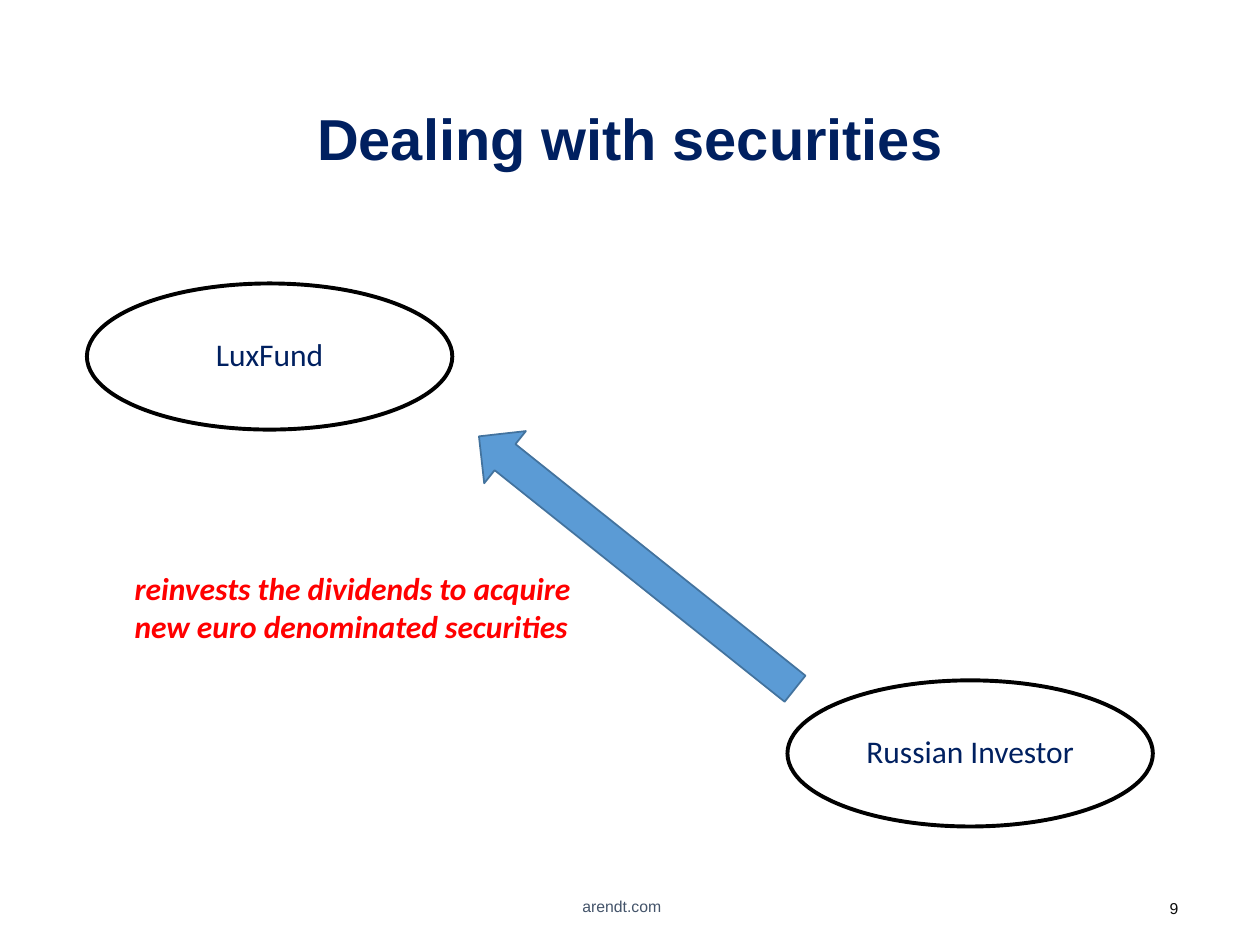
from pptx import Presentation
from pptx import util as u
from pptx.dml.color import RGBColor
from pptx.enum import shapes, text

COLUMNS, ROWS = 100, 75
NAVY, RED, SLATE, INK = "002060", "FF0000", "44546A", "0C0C0C"
BLACK, BLUE, DARK_BLUE = "000000", "5B9BD5", "43739E"


def color(hex_string):
    return RGBColor.from_string(hex_string)


class SlideBuilder:
    """Holds the style and the current slide; boxes are (column, row, columns, rows)."""

    heading_font = "Arial"
    body_font = "Calibri"

    def __init__(self, deck):
        self.deck = deck
        self.slide = deck.slides.add_slide(deck.slide_layouts[6])

    def place(self, box):
        column = self.deck.slide_width / COLUMNS
        row = self.deck.slide_height / ROWS
        return [u.Emu(round(n * unit)) for n, unit in zip(box, (column, row) * 2)]

    def fill_text(self, frame, wording, hue, layout=None, **font):
        frame.word_wrap = True
        paragraph = frame.paragraphs[0]
        for name, value in (layout or {}).items():
            setattr(paragraph, name, value)
        run = paragraph.add_run()
        run.text = wording
        for name, value in font.items():
            setattr(run.font, name, value)
        run.font.color.rgb = color(hue)

    def label(self, box, wording, hue, anchor=text.MSO_ANCHOR.TOP, layout=None, **font):
        frame = self.slide.shapes.add_textbox(*self.place(box)).text_frame
        frame.vertical_anchor = anchor
        self.fill_text(frame, wording, hue, layout, **font)

    def shape(self, kind, box, line, weight, fill=None):
        shape = self.slide.shapes.add_shape(kind, *self.place(box))
        shape.shadow.inherit = False
        if fill:
            shape.fill.solid()
            shape.fill.fore_color.rgb = color(fill)
        else:
            shape.fill.background()
        shape.line.color.rgb = color(line)
        shape.line.width = u.Pt(weight)
        return shape

    def party(self, column, row, wording):
        oval = self.shape(shapes.MSO_SHAPE.OVAL, (column, row, 29, 11.6), BLACK, 2.25)
        oval.text_frame.vertical_anchor = text.MSO_ANCHOR.MIDDLE
        self.fill_text(oval.text_frame, wording, NAVY,
                       {"alignment": text.PP_ALIGN.CENTER, "line_spacing": 0.9},
                       name=self.body_font, size=u.Pt(18))

    def arrow(self, box, rotation):
        arrow = self.shape(shapes.MSO_SHAPE.DOWN_ARROW, box, DARK_BLUE, 1, BLUE)
        arrow.rotation = rotation


def main():
    deck = Presentation()
    deck.slide_width, deck.slide_height = u.Inches(10), u.Inches(7.5)
    page = SlideBuilder(deck)
    centered = {"alignment": text.PP_ALIGN.CENTER}
    middle = text.MSO_ANCHOR.MIDDLE
    small = {"name": page.heading_font, "size": u.Pt(9)}

    page.label((89.8, 70.8, 4.7, 2.9), "9", INK,
               layout={"alignment": text.PP_ALIGN.RIGHT}, **small)
    page.label((41, 70.2, 16.7, 3.4), "arendt.com", SLATE, middle, centered, **small)
    page.label((6.9, 4, 86.2, 14.5), "Dealing with securities", NAVY, middle,
               {**centered, "line_spacing": 0.9},
               name=page.heading_font, size=u.Pt(33), bold=True)

    page.party(6.9, 22.5, "LuxFund")
    page.party(62.5, 54, "Russian Investor")
    page.arrow((47.9, 28.6, 5.3, 32.1), 128.6)
    page.label((9.7, 44.7, 37, 7.1),
               "reinvests the dividends to acquire new euro denominated securities", RED,
               name=page.body_font, size=u.Pt(18), bold=True, italic=True)

    deck.save("out.pptx")


if __name__ == "__main__":
    main()
